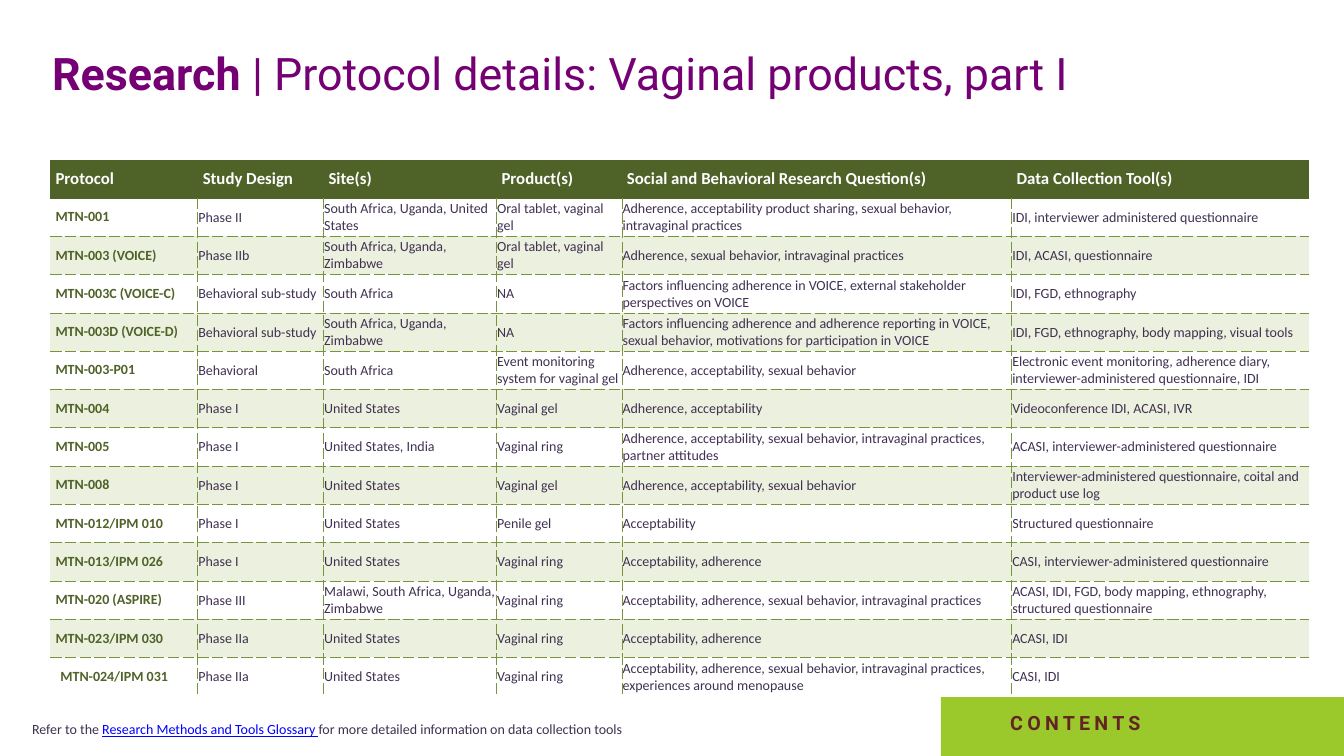
import pptx
import pptx.dml.color
import pptx.enum.shapes
import pptx.enum.text
import pptx.oxml.ns
import pptx.util
import lxml.etree

Cm = pptx.util.Cm
RGBColor = pptx.dml.color.RGBColor
MIDDLE = pptx.enum.text.MSO_ANCHOR.MIDDLE
LEFT = pptx.enum.text.PP_ALIGN.LEFT

PURPLE = RGBColor(0x74, 0x00, 0x74)
DARK_GREEN = RGBColor(0x4F, 0x62, 0x28)
DASH_GREEN = RGBColor(0x77, 0x93, 0x3C)
PALE_GREEN = RGBColor(0xEB, 0xF1, 0xDE)
LIME = RGBColor(0x9B, 0xC8, 0x2A)
MAROON = RGBColor(0x63, 0x25, 0x23)
INK = RGBColor(0x40, 0x31, 0x52)
LINK_BLUE = RGBColor(0x00, 0x00, 0xFF)
WHITE = RGBColor(0xFF, 0xFF, 0xFF)

COLUMN_WIDTHS = [3.71, 3.17, 4.36, 3.16, 9.82, 7.5]
HEADERS = ["Protocol", "Study Design", "Site(s)", "Product(s)",
           "Social and Behavioral Research Question(s)", "Data Collection Tool(s)"]
PROTOCOLS = [
    ["MTN-001", "Phase II", "South Africa, Uganda, United States", "Oral tablet, vaginal gel",
     "Adherence, acceptability product sharing, sexual behavior, intravaginal practices",
     "IDI, interviewer administered questionnaire"],
    ["MTN-003 (VOICE)", "Phase IIb", "South Africa, Uganda, Zimbabwe", "Oral tablet, vaginal gel",
     "Adherence, sexual behavior, intravaginal practices", "IDI, ACASI, questionnaire"],
    ["MTN-003C (VOICE-C)", "Behavioral sub-study", "South Africa", "NA",
     "Factors influencing adherence in VOICE, external stakeholder perspectives on VOICE",
     "IDI, FGD, ethnography"],
    ["MTN-003D (VOICE-D)", "Behavioral sub-study", "South Africa, Uganda, Zimbabwe", "NA",
     "Factors influencing adherence and adherence reporting in VOICE, sexual behavior, "
     "motivations for participation in VOICE",
     "IDI, FGD, ethnography, body mapping, visual tools"],
    ["MTN-003-P01", "Behavioral", "South Africa", "Event monitoring system for vaginal gel",
     "Adherence, acceptability, sexual behavior",
     "Electronic event monitoring, adherence diary, interviewer-administered questionnaire, IDI"],
    ["MTN-004", "Phase I", "United States", "Vaginal gel", "Adherence, acceptability",
     "Videoconference IDI, ACASI, IVR"],
    ["MTN-005", "Phase I", "United States, India", "Vaginal ring",
     "Adherence, acceptability, sexual behavior, intravaginal practices, partner attitudes",
     "ACASI, interviewer-administered questionnaire"],
    ["MTN-008", "Phase I", "United States", "Vaginal gel",
     "Adherence, acceptability, sexual behavior",
     "Interviewer-administered questionnaire, coital and product use log"],
    ["MTN-012/IPM 010", "Phase I", "United States", "Penile gel", "Acceptability",
     "Structured questionnaire"],
    ["MTN-013/IPM 026", "Phase I", "United States", "Vaginal ring", "Acceptability, adherence",
     "CASI, interviewer-administered questionnaire"],
    ["MTN-020 (ASPIRE)", "Phase III", "Malawi, South Africa, Uganda, Zimbabwe", "Vaginal ring",
     "Acceptability, adherence, sexual behavior, intravaginal practices",
     "ACASI, IDI, FGD, body mapping, ethnography, structured questionnaire"],
    ["MTN-023/IPM 030", "Phase IIa", "United States", "Vaginal ring",
     "Acceptability, adherence", "ACASI, IDI"],
    ["MTN-024/IPM 031", "Phase IIa", "United States", "Vaginal ring",
     "Acceptability, adherence, sexual behavior, intravaginal practices, "
     "experiences around menopause", "CASI, IDI"],
]


def add_text(paragraph, text, size=10, font="Calibri", color=INK, bold=False,
             underline=False, spacing=None):
    run = paragraph.add_run()
    run.text = text
    run.font.size = pptx.util.Pt(size)
    run.font.name = font
    run.font.color.rgb = color
    run.font.bold = bold
    run.font.underline = underline
    if spacing:
        run.font._element.set("spc", str(spacing * 100))


def set_margins(target, left, top, right, bottom):
    target.margin_left, target.margin_top = Cm(left), Cm(top)
    target.margin_right, target.margin_bottom = Cm(right), Cm(bottom)


def add_border(cell, side, color=None, dash="solid"):
    properties = cell._tc.get_or_add_tcPr()
    name = pptx.oxml.ns.qn
    line = lxml.etree.SubElement(properties, name(f"a:ln{side}"), w="3175")
    if color is None:
        lxml.etree.SubElement(line, name("a:noFill"))
        return
    fill = lxml.etree.SubElement(line, name("a:solidFill"))
    lxml.etree.SubElement(fill, name("a:srgbClr"), val=str(color))
    lxml.etree.SubElement(line, name("a:prstDash"), val=dash)


def border_cell(cell, row, column, last_row, last_column):
    inner = {"L": row > 0 and column > 0, "R": row > 0 and column < last_column,
             "T": row > 0, "B": row < last_row}
    for side, shown in inner.items():
        if not shown:
            add_border(cell, side)
        elif (row, side) in ((0, "B"), (1, "T")):
            add_border(cell, side, DARK_GREEN)
        else:
            add_border(cell, side, DASH_GREEN, "sysDash")


def add_title(slide, left, top, width, height):
    title = slide.shapes.title
    title.left, title.top, title.width, title.height = Cm(left), Cm(top), Cm(width), Cm(height)
    frame = title.text_frame
    frame.vertical_anchor = MIDDLE
    paragraph = frame.paragraphs[0]
    paragraph.alignment = LEFT
    add_text(paragraph, "Research ", size=32, font="Roboto", color=PURPLE, bold=True)
    add_text(paragraph, "| Protocol details: Vaginal products, part I",
             size=32, font="Roboto", color=PURPLE)


def add_protocol_table(slide, left, top, width, height):
    rows = [HEADERS] + PROTOCOLS
    last_row, last_column = len(rows) - 1, len(HEADERS) - 1
    table = slide.shapes.add_table(len(rows), len(HEADERS), Cm(left), Cm(top),
                                   Cm(width), Cm(height)).table
    table.first_row = False
    table.horz_banding = False
    for column, share in zip(table.columns, COLUMN_WIDTHS):
        column.width = Cm(width * share / sum(COLUMN_WIDTHS))
    for row, texts in enumerate(rows):
        for column, text in enumerate(texts):
            cell = table.cell(row, column)
            cell.vertical_anchor = MIDDLE
            border_cell(cell, row, column, last_row, last_column)
            cell.fill.solid()
            paragraph = cell.text_frame.paragraphs[0]
            if row == 0:
                cell.fill.fore_color.rgb = DARK_GREEN
                add_text(paragraph, text, size=12, color=WHITE, bold=True)
            else:
                cell.fill.fore_color.rgb = WHITE if row % 2 else PALE_GREEN
                add_text(paragraph, text, color=INK if column else DARK_GREEN, bold=column == 0)
            if row > 0 and column > 0:
                set_margins(cell, 0.02, 0.02, 0.02, 0)
            elif row < last_row:
                set_margins(cell, 0.13, 0.13, 0.13, 0.13)


def add_text_box(slide, left, top, width, height):
    frame = slide.shapes.add_textbox(Cm(left), Cm(top), Cm(width), Cm(height)).text_frame
    frame.word_wrap = True
    return frame.paragraphs[0]


def add_contents_button(slide, left, top, width, height):
    button = slide.shapes.add_shape(pptx.enum.shapes.MSO_SHAPE.RECTANGLE,
                                    Cm(left), Cm(top), Cm(width), Cm(height))
    button.shadow.inherit = False
    button.fill.solid()
    button.fill.fore_color.rgb = LIME
    button.line.fill.background()
    paragraph = add_text_box(slide, left + 1.5, top + 0.23, 6.98, 0.86)
    add_text(paragraph, "CONTENTS", size=14, font="Roboto", color=MAROON, bold=True, spacing=3)


def add_glossary_note(slide, left, top, width, height):
    paragraph = add_text_box(slide, left, top, width, height)
    add_text(paragraph, "Refer to the ")
    add_text(paragraph, "Research Methods and Tools Glossary ", color=LINK_BLUE, underline=True)
    add_text(paragraph, "for more detailed information on data collection tools")


def main():
    presentation = pptx.Presentation()
    presentation.slide_width, presentation.slide_height = Cm(33.87), Cm(19.05)
    slide = presentation.slides.add_slide(presentation.slide_layouts[5])
    add_title(slide, 1.06, 0.48, 33.45, 2.69)
    add_protocol_table(slide, 1.27, 4.02, 31.72, 13.52)
    add_contents_button(slide, 23.71, 17.57, 10.16, 8.51)
    add_glossary_note(slide, 0.56, 18.04, 22.7, 0.68)
    presentation.save("out.pptx")


if __name__ == "__main__":
    main()
